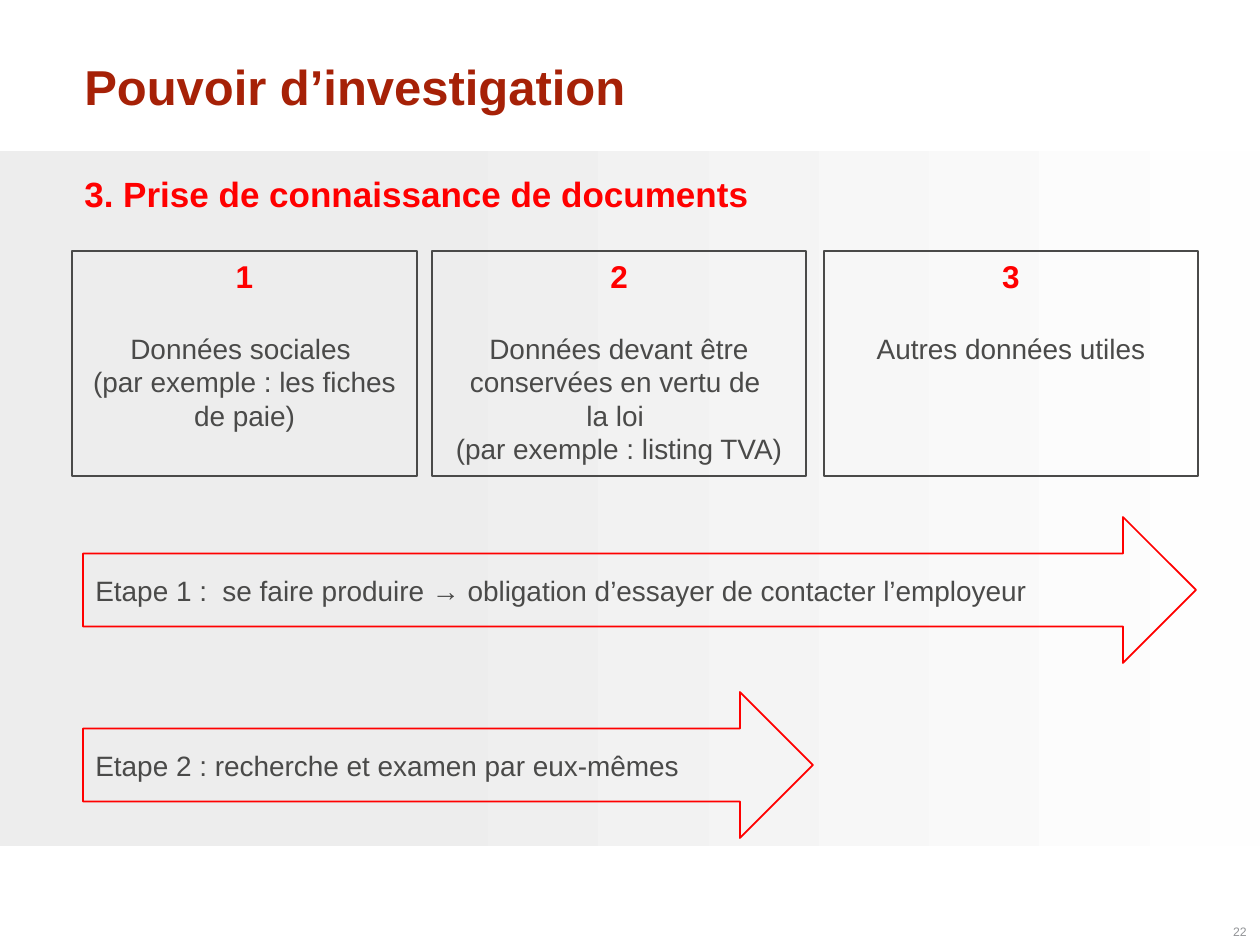
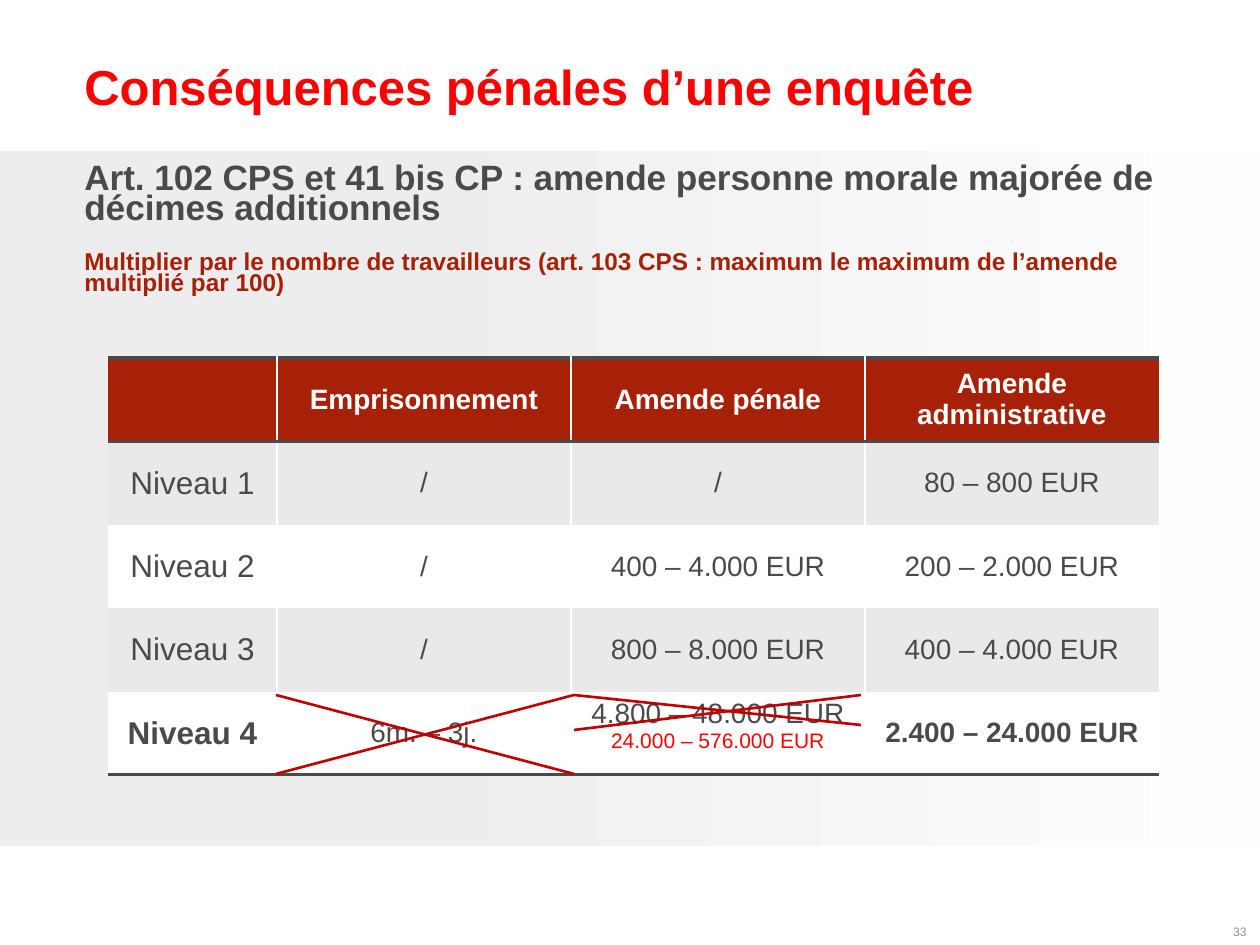
from lxml import etree
from pptx import Presentation
from pptx import util as u
from pptx.dml.color import RGBColor
from pptx.enum import shapes, text
from pptx.oxml.ns import qn

WHITE = RGBColor(0xFF, 0xFF, 0xFF)
INK = RGBColor(0x4A, 0x4A, 0x49)
BRICK = RGBColor(0xA6, 0x21, 0x07)
RED = RGBColor(0xFF, 0x00, 0x00)
CROSS = RGBColor(0xC0, 0x00, 0x00)
GREY = RGBColor(0x92, 0x94, 0x97)
STRIPE = RGBColor(0xE9, 0xE9, 0xE9)
DIM = RGBColor(0xED, 0xED, 0xED)
PALE = RGBColor(0xFE, 0xFE, 0xFE)

FONT = "Arial"
LEFT, WIDE = 72, 1124
MID, TOP, LOW = (text.MSO_ANCHOR.MIDDLE, text.MSO_ANCHOR.TOP,
                 text.MSO_ANCHOR.BOTTOM)
CENTER, RIGHT = text.PP_ALIGN.CENTER, text.PP_ALIGN.RIGHT
KIND = shapes.MSO_SHAPE


def px(n):
    return u.Emu(round(n * 914400 / 126))


def place(box):
    return [px(n) for n in box]


def style(item, **values):
    for name, value in values.items():
        setattr(item, name, value)


def write(frame, lines, **para):
    """Fill a text frame; a line is (words, size, colour, bold, space before)."""
    frame.word_wrap = True
    for i, (words, size, color, bold, gap) in enumerate(lines):
        par = frame.paragraphs[0] if i == 0 else frame.add_paragraph()
        style(par, **para)
        if gap:
            par.space_before = u.Pt(gap)
        run = par.add_run()
        run.text = words
        style(run.font, name=FONT, size=u.Pt(size), bold=bold)
        run.font.color.rgb = color


def label(slide, box, lines, anchor=TOP, **para):
    frame = slide.shapes.add_textbox(*place(box)).text_frame
    frame.vertical_anchor = anchor
    write(frame, lines, **para)


def outline(slide, kind, box, color, width):
    shape = slide.shapes.add_shape(kind, *place(box))
    shape.shadow.inherit = False
    shape.fill.background()
    shape.line.color.rgb = color
    shape.line.width = u.Pt(width)
    return shape


# Shared frame: grey band, title and page number
def frame(deck, title, color, page):
    slide = deck.slides.add_slide(deck.slide_layouts[6])
    band = slide.shapes.add_shape(KIND.RECTANGLE, *place((0, 151, 1260, 695)))
    band.shadow.inherit = False
    band.line.fill.background()
    band.fill.gradient()
    band.fill.gradient_angle = 0
    for stop, spot, tone in zip(band.fill.gradient_stops, (0.3, 1), (DIM, PALE)):
        stop.position = spot
        stop.color.rgb = tone
    label(slide, (1196, 895, 63, 50), [(page, 7, GREY, False, 0)],
          LOW, alignment=RIGHT)
    label(slide, (LEFT, 50, WIDE, 80), [(title, 28, color, True, 0)],
          MID, line_spacing=0.9)
    return slide


# Numbered box with centred text
def card(slide, box, number, lines):
    shape = outline(slide, KIND.RECTANGLE, box, INK, 0.75)
    shape.text_frame.vertical_anchor = TOP
    rows = [(number, 18, RED, True, 0)]
    rows += [(words, 16, INK, False, 0 if i else 20.7)
             for i, words in enumerate(lines)]
    write(shape.text_frame, rows, alignment=CENTER)


# Step arrow with its caption
def step(slide, box, words):
    x, y, w, h = box
    label(slide, (x, y + 50, w + 30, 47), [(words, 16, INK, False, 0)])
    outline(slide, KIND.RIGHT_ARROW, box, RED, 1)


def edge(cell, sides):
    """Set the four borders; a side is (colour, points) or None."""
    props = cell._tc.get_or_add_tcPr()
    for i, (side, look) in enumerate(zip("LRTB", sides)):
        line = etree.Element(qn("a:ln" + side))
        if look:
            color, width = look
            line.set("w", str(u.Pt(width)))
            fill = etree.SubElement(line, qn("a:solidFill"))
            etree.SubElement(fill, qn("a:srgbClr"), val=str(color))
        else:
            etree.SubElement(line, qn("a:noFill"))
        props.insert(i, line)


# Table of fines: header, striped rows, last row closed by a rule
def fines(slide, box, widths, rows):
    last, end = len(rows) - 1, len(widths) - 1
    grid = slide.shapes.add_table(len(rows), len(widths), *place(box)).table
    for col, width in zip(grid.columns, widths):
        col.width = px(width)
    thin, rule = (WHITE, 1), (INK, 2)
    for r, row in enumerate(rows):
        grid.rows[r].height = px(box[3] / len(rows))
        for c, words in enumerate(row):
            cell = grid.cell(r, c)
            cell.vertical_anchor = MID
            cell.fill.solid()
            cell.fill.fore_color.rgb = (BRICK if r == 0 else
                                        STRIPE if r % 2 else WHITE)
            edge(cell, (thin if c else None, thin if c < end else None,
                        rule if r < 2 else None,
                        rule if r in (0, last) else None))
            size = 18 if c == 0 else 16
            bold = r == 0 or (r == last and c in (0, end))
            lines = [(words, size, INK if r else WHITE, bold, 0)]
            if r == last and c == 2:
                cell.vertical_anchor = TOP
                lines.append(("24.000 – 576.000 EUR", 12, RED, False, 0))
            if words:
                write(cell.text_frame, lines, alignment=CENTER)


def strike(slide, x1, y1, x2, y2):
    line = slide.shapes.add_connector(shapes.MSO_CONNECTOR.STRAIGHT,
                                      *place((x1, y1, x2, y2)))
    line.line.color.rgb = CROSS
    line.line.width = u.Pt(1.5)
    etree.SubElement(line._element.spPr, qn("a:effectLst"))


def powers(deck):
    slide = frame(deck, "Pouvoir d’investigation", BRICK, "22")
    label(slide, (LEFT, 156, WIDE, 80),
          [("3. Prise de connaissance de documents", 20, RED, True, 0)],
          MID, line_spacing=0.9)
    cards = [
        (72, 345, ["Données sociales ", "(par exemple : les fiches de paie)"]),
        (432, 374, ["Données devant être conservées en vertu de ", "la loi ",
                    "(par exemple : listing TVA)"]),
        (824, 374, ["Autres données utiles"]),
    ]
    for i, (x, w, lines) in enumerate(cards, 1):
        card(slide, (x, 251, w, 225), str(i), lines)
    step(slide, (83, 517, 1113, 146),
         "Etape 1 :  se faire produire → obligation d’essayer de contacter "
         "l’employeur")
    step(slide, (83, 692, 730, 146),
         "Etape 2 : recherche et examen par eux-mêmes")


def results(deck):
    slide = frame(deck, "Conséquences pénales d’une enquête", RED, "33")
    label(slide, (LEFT, 156, WIDE, 150), [
        ("Art. 102 CPS et 41 bis CP : amende personne morale majorée de "
         "décimes additionnels", 20.1, INK, True, 0),
        ("Multiplier par le nombre de travailleurs (art. 103 CPS : maximum "
         "le maximum de l’amende multiplié par 100)", 13.9, BRICK, True, 16.2),
    ], MID, line_spacing=0.7)
    fines(slide, (108, 358, 1051, 417), (169, 294, 294, 294), [
        ("", "Emprisonnement", "Amende pénale", "Amende administrative"),
        ("Niveau 1", "/", "/", "80 – 800 EUR"),
        ("Niveau 2", "/", "400 – 4.000 EUR", "200 – 2.000 EUR"),
        ("Niveau 3", "/", "800 – 8.000 EUR", "400 – 4.000 EUR"),
        ("Niveau 4", "6m. – 3j.", "4.800 – 48.000 EUR", "2.400 – 24.000 EUR"),
    ])
    # Crossed-out penalties
    for ends in ((276, 695, 574, 774), (276, 774, 574, 695),
                 (574, 695, 861, 725), (574, 730, 861, 695)):
        strike(slide, *ends)


def main():
    deck = Presentation()
    style(deck, slide_width=px(1260), slide_height=px(945))
    powers(deck)
    results(deck)
    deck.save("out.pptx")


if __name__ == "__main__":
    main()
